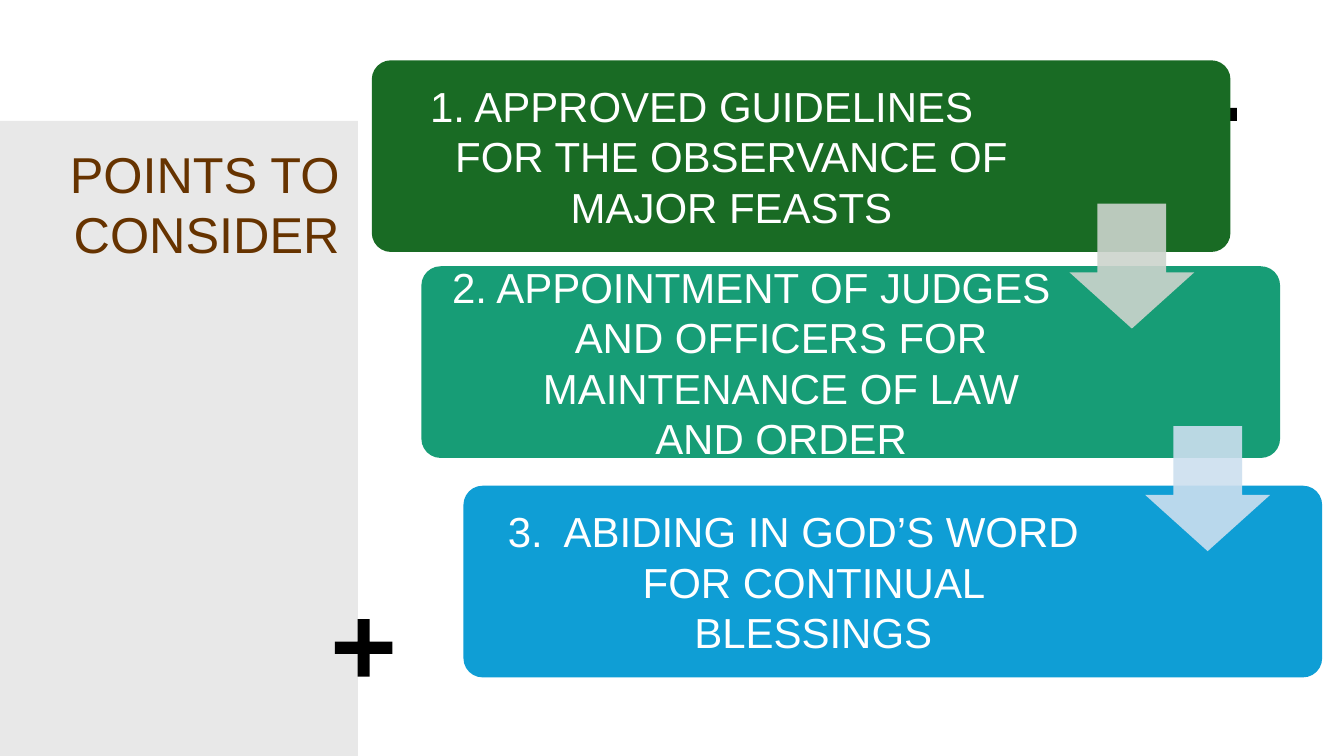
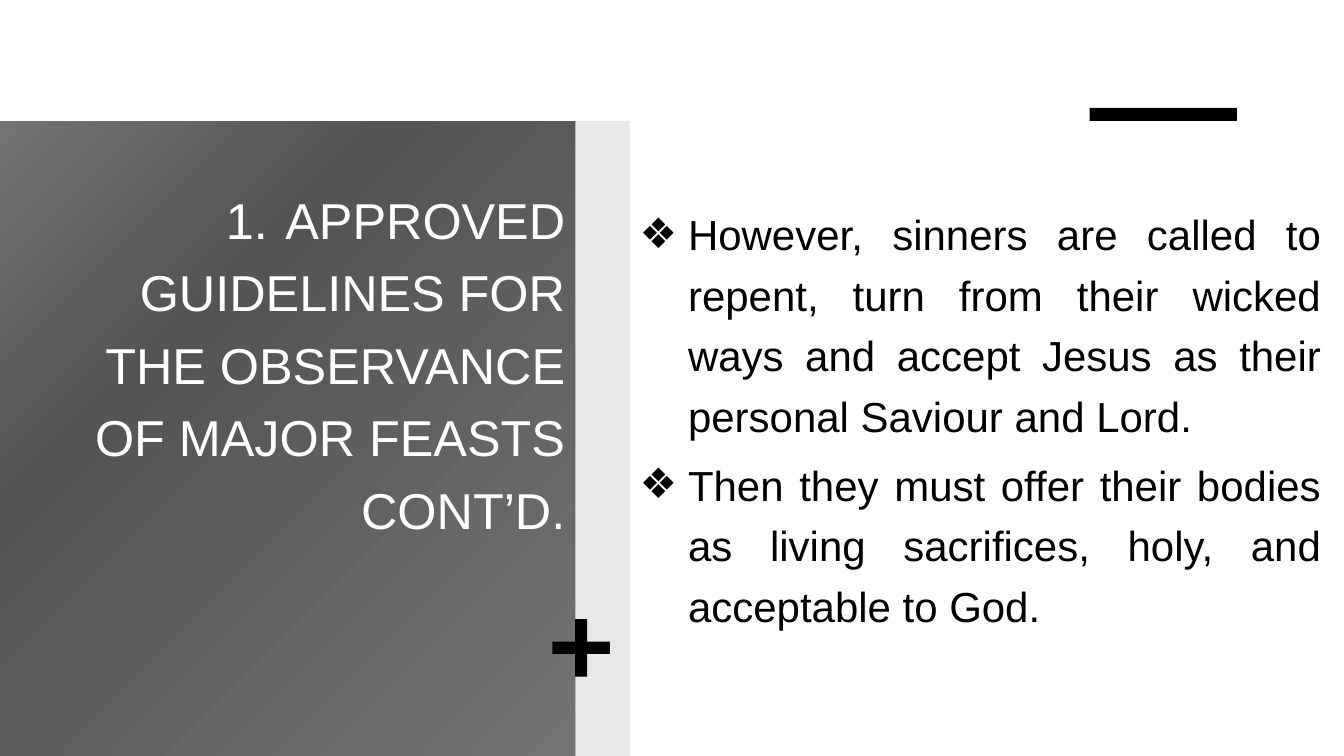
from lxml import etree
from pptx import Presentation
from pptx import util as u
from pptx.dml import color
from pptx.enum import shapes, text
from pptx.oxml import ns

Shape = shapes.MSO_SHAPE
Align = text.PP_ALIGN
Anchor = text.MSO_ANCHOR

BLACK, WHITE, GREY, BROWN = "000000", "FFFFFF", "E8E8E8", "663300"
BAND_TOP, BAND_HEIGHT = 3.05, 16
CARD_WIDTH, CARD_HEIGHT, ARROW_SIZE = 21.64, 4.83, 3.15
TITLE = {"size": 36, "align": Align.RIGHT}
CARD = {"size": 30, "align": Align.CENTER, "anchor": Anchor.MIDDLE,
        "margins": (0.3, 0.3, 5.3, 0.3)}
BODY = {"size": 30, "align": Align.JUSTIFY, "indent": 1.22,
        "spacing": 1.2, "after": 6, "bullet": ("buChar", {"char": "❖"})}
NUMBERED_TITLE = {**TITLE, "indent": 1.5, "spacing": 1.2, "after": 6,
                  "bullet": ("buAutoNum", {"type": "arabicPeriod"})}


def rgb(value):
    return color.RGBColor.from_string(value)


def set_all(target, values):
    for name, value in values.items():
        setattr(target, name, value)


def add_element(parent, tag, **attributes):
    return etree.SubElement(parent, ns.qn(f"a:{tag}"), attributes)


class Deck:
    """Holds the shared style and the slide being drawn."""

    def __init__(self):
        self.presentation = Presentation()
        set_all(self.presentation, {"slide_width": u.Cm(33.87),
                                    "slide_height": u.Cm(19.05)})
        self.slide = None

    def new_slide(self):
        layout = self.presentation.slide_layouts[6]
        self.slide = self.presentation.slides.add_slide(layout)

    def shape(self, kind, box, fill, adjustments=(), alpha=None):
        shape = self.slide.shapes.add_shape(kind, *map(u.Cm, box))
        shape.shadow.inherit = False
        shape.line.fill.background()
        shape.fill.solid()
        shape.fill.fore_color.rgb = rgb(fill)
        for index, value in enumerate(adjustments):
            shape.adjustments[index] = value
        if alpha:
            solid = shape.element.spPr.find(ns.qn("a:solidFill"))
            add_element(solid[0], "alpha", val=str(alpha * 1000))
        return shape

    def band(self, left, width, fill=GREY):
        return self.shape(Shape.RECTANGLE, (left, BAND_TOP, width, BAND_HEIGHT), fill)

    def gradient_band(self, width, stops):
        band = self.band(0, width)
        band.fill.gradient()
        band.fill.gradient_angle = 315
        stop_list = next(band.element.iter(ns.qn("a:gsLst")))
        for stop in list(stop_list):
            stop_list.remove(stop)
        for position, value in stops:
            stop = add_element(stop_list, "gs", pos=str(position * 1000))
            add_element(stop, "srgbClr", val=value)

    def plus(self, band_right):
        self.shape(Shape.CROSS, (band_right - 0.58, 15.6, 1.45, 1.45), BLACK, [0.395])

    def dash(self):
        self.shape(Shape.RECTANGLE, (27.46, 2.72, 3.71, 0.33), BLACK)

    def text_box(self, box, paragraphs, ink, style):
        shape = self.slide.shapes.add_textbox(*map(u.Cm, box))
        self.fill_text(shape, paragraphs, ink, style)

    def card(self, left, top, fill, label, indent):
        box = (left, top, CARD_WIDTH, CARD_HEIGHT)
        shape = self.shape(Shape.ROUNDED_RECTANGLE, box, fill, [0.1])
        self.fill_text(shape, [label], WHITE, {**CARD, "indent": indent})

    def arrow(self, left, top, fill):
        box = (left, top, ARROW_SIZE, ARROW_SIZE)
        self.shape(Shape.DOWN_ARROW, box, fill, [0.55, 0.45], alpha=90)

    def fill_text(self, shape, paragraphs, ink, style):
        frame = shape.text_frame
        left, top, right, bottom = map(u.Cm, style.get("margins", (0.25, 0.13, 0.25, 0.13)))
        set_all(frame, {"word_wrap": True, "text": "\n".join(paragraphs),
                        "vertical_anchor": style.get("anchor", Anchor.TOP),
                        "margin_left": left, "margin_top": top,
                        "margin_right": right, "margin_bottom": bottom})
        for paragraph in frame.paragraphs:
            set_all(paragraph, {"alignment": style["align"],
                                "line_spacing": style.get("spacing", 1.0),
                                "space_after": u.Pt(style.get("after", 0))})
            font = paragraph.runs[0].font
            set_all(font, {"name": "Arial", "size": u.Pt(style["size"])})
            font.color.rgb = rgb(ink)
            properties = paragraph._p.get_or_add_pPr()
            indent = u.Cm(style.get("indent", 0))
            properties.set("marL", str(int(indent)))
            properties.set("indent", str(-int(indent)))
            if "bullet" in style:
                tag, attributes = style["bullet"]
                add_element(properties, "buFont", typeface="Arial")
                add_element(properties, tag, **attributes)


def points_slide(deck):
    side_width = 9.02
    deck.new_slide()
    deck.band(0, side_width)
    deck.dash()
    deck.text_box((0, 3.43, 8.81, 3.4), ["POINTS TO CONSIDER"], BROWN,
                  {**TITLE, "anchor": Anchor.MIDDLE})
    deck.plus(side_width)
    for card in (
        (9.37, 1.52, "196B24", "1. APPROVED GUIDELINES FOR THE OBSERVANCE OF MAJOR FEASTS", 1.5),
        (10.62, 6.71, "179D76",
         "2. APPOINTMENT OF JUDGES AND OFFICERS FOR MAINTENANCE OF LAW AND ORDER", 1.5),
        (11.68, 12.24, "0F9ED5", "3.  ABIDING IN GOD’S WORD FOR CONTINUAL BLESSINGS", 1),
    ):
        deck.card(*card)
    deck.arrow(26.95, 5.13, "CCD4CD")
    deck.arrow(28.86, 10.74, "CCDFEF")


def guidelines_slide(deck):
    panel_width, strip_width = 14.5, 1.37
    deck.new_slide()
    deck.gradient_band(panel_width, [(0, "737373"), (32, "545454"), (100, "737373")])
    deck.text_box((0, 4.32, panel_width, 9.3),
                  ["APPROVED GUIDELINES FOR THE OBSERVANCE OF MAJOR FEASTS CONT’D."],
                  WHITE, NUMBERED_TITLE)
    deck.text_box((panel_width + strip_width, 4.88, 17.68, 11), [
        "However, sinners are called to repent, turn from their wicked ways "
        "and accept Jesus as their personal Saviour and Lord.",
        "Then they must offer their bodies as living sacrifices, holy, and acceptable to God.",
    ], BLACK, BODY)
    deck.band(panel_width, strip_width)
    deck.plus(panel_width)
    deck.dash()


def main():
    deck = Deck()
    points_slide(deck)
    guidelines_slide(deck)
    deck.presentation.save("out.pptx")


if __name__ == "__main__":
    main()
